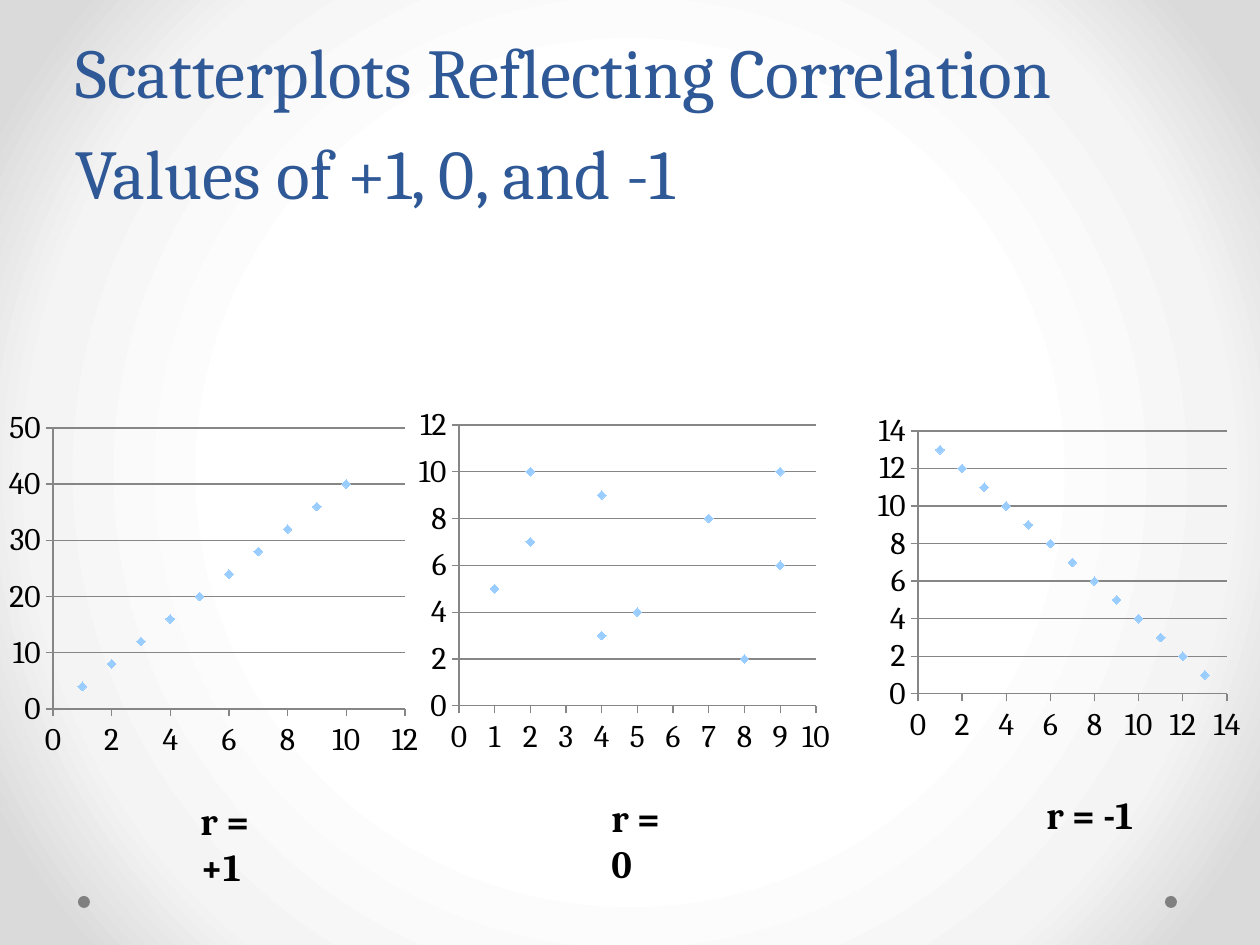
from pptx import Presentation
from pptx.chart.data import XyChartData
from pptx.dml.color import RGBColor
from pptx.enum.chart import XL_CHART_TYPE, XL_MARKER_STYLE, XL_TICK_MARK
from pptx.enum.shapes import MSO_SHAPE
from pptx.enum.text import MSO_ANCHOR, MSO_AUTO_SIZE, PP_ALIGN
from pptx.oxml import parse_xml
from pptx.oxml.ns import nsdecls, qn
from pptx.util import Emu, Pt

SCATTER = XL_CHART_TYPE.XY_SCATTER
DIAMOND = XL_MARKER_STYLE.DIAMOND
OUTSIDE, NO_TICK = XL_TICK_MARK.OUTSIDE, XL_TICK_MARK.NONE
OVAL = MSO_SHAPE.OVAL
TOP, BOTTOM = MSO_ANCHOR.TOP, MSO_ANCHOR.BOTTOM
LEFT, NO_FIT = PP_ALIGN.LEFT, MSO_AUTO_SIZE.NONE

FONT = "Cambria"
BLACK = RGBColor(0, 0, 0)
NAVY = RGBColor(0x2F, 0x58, 0x97)
SKY = RGBColor(0x99, 0xCC, 0xFF)
GRAY = RGBColor(0x80, 0x80, 0x80)
RULE = RGBColor(0x86, 0x86, 0x86)
GLOW = [(0, RGBColor(0xFF, 0xFF, 0xFF)), (50, RGBColor(0xFF, 0xFF, 0xFF)),
        (76, RGBColor(0xF4, 0xF4, 0xF4)), (92, RGBColor(0xDA, 0xDA, 0xDA)),
        (100, RGBColor(0xDA, 0xDA, 0xDA))]

SCALE = 914400 / 126

# chart box, plot box, points, x (max, step), y (max, step), label, label box
PANELS = [
    ((0, 403, 427, 363), (53, 428, 352, 281),
     [(x, 4 * x) for x in range(1, 11)],
     (12, 2), (50, 10), "r = +1", (188, 791, 118, 59)),
    ((411, 399, 428, 363), (459, 425, 357, 281),
     [(1, 5), (9, 6), (4, 9), (2, 10), (9, 10),
      (4, 3), (7, 8), (2, 7), (5, 4), (8, 2)],
     (10, 1), (12, 2), "r = 0", (599, 788, 98, 59)),
    ((838, 392, 422, 372), (918, 431, 309, 263),
     [(x, 14 - x) for x in range(1, 14)],
     (14, 2), (14, 2), "r = -1", (1034, 785, 113, 59)),
]


def px(n):
    return Emu(round(n * SCALE))


def place(box):
    return [px(n) for n in box]


def write(shape, text, size, color, bold=False, anchor=TOP, lead=None):
    frame = shape.text_frame
    frame.word_wrap = True
    frame.auto_size = NO_FIT
    frame.vertical_anchor = anchor
    para = frame.paragraphs[0]
    para.alignment = LEFT
    if lead:
        para.line_spacing = Pt(lead)
    run = para.add_run()
    run.text = text
    font = run.font
    font.name, font.size, font.bold = FONT, Pt(size), bold
    font.color.rgb = color


def back(slide):
    """Fill the background with a round glow from the centre."""
    slide.background.fill.gradient()
    grad = slide.element.find(".//" + qn("a:gradFill"))
    stops = "".join(
        f'<a:gs pos="{pos * 1000}"><a:srgbClr val="{color}"/></a:gs>'
        for pos, color in GLOW)
    grad.getparent().replace(grad, parse_xml(
        f'<a:gradFill {nsdecls("a")} rotWithShape="1">'
        f'<a:gsLst>{stops}</a:gsLst><a:path path="circle">'
        '<a:fillToRect l="50000" t="50000" r="50000" b="50000"/>'
        '</a:path></a:gradFill>'))


def dot(slide, box):
    shape = slide.shapes.add_shape(OVAL, *place(box))
    shape.shadow.inherit = False
    shape.fill.solid()
    shape.fill.fore_color.rgb = GRAY
    shape.line.fill.background()


def title(slide, text, box):
    shape = slide.shapes.title
    shape.left, shape.top, shape.width, shape.height = place(box)
    write(shape, text, 40, NAVY, anchor=BOTTOM, lead=58)


def rule(line):
    line.color.rgb = RULE
    line.width = Pt(0.75)


def scale(axis, top, step):
    axis.minimum_scale, axis.maximum_scale = 0, top
    axis.major_unit = step
    axis.major_tick_mark, axis.minor_tick_mark = OUTSIDE, NO_TICK
    axis.tick_labels.number_format = "General"
    axis.tick_labels.number_format_is_linked = False
    rule(axis.format.line)


def inset(chart, box, plot):
    """Fix the inner plot area at its place within the chart box."""
    left, top, wide, high = box
    parts = {"x": (plot[0] - left) / wide, "y": (plot[1] - top) / high,
             "w": plot[2] / wide, "h": plot[3] / high}
    modes = "".join(f'<c:{key}Mode val="edge"/>' for key in "xy")
    sizes = "".join(f'<c:{key} val="{val:.4f}"/>'
                    for key, val in parts.items())
    area = chart.element.find(".//" + qn("c:plotArea"))
    old = area.find(qn("c:layout"))
    if old is not None:
        area.remove(old)
    area.insert(0, parse_xml(
        f'<c:layout {nsdecls("c")}><c:manualLayout>'
        f'<c:layoutTarget val="inner"/>{modes}{sizes}'
        '</c:manualLayout></c:layout>'))


def scatter(slide, box, plot, points, across, up):
    data = XyChartData()
    series = data.add_series("Series 1")
    for x, y in points:
        series.add_data_point(x, y)
    chart = slide.shapes.add_chart(SCATTER, *place(box), data).chart
    chart.has_legend = chart.has_title = False
    chart.font.name, chart.font.size = FONT, Pt(18)
    chart.font.color.rgb = BLACK
    chart.plots[0].vary_by_categories = False
    scale(chart.category_axis, *across)
    scale(chart.value_axis, *up)
    chart.category_axis.has_major_gridlines = False
    chart.value_axis.has_major_gridlines = True
    rule(chart.value_axis.major_gridlines.format.line)
    inset(chart, box, plot)
    series = chart.plots[0].series[0]
    series.smooth = False
    series.format.line.fill.background()
    mark = series.marker
    mark.style, mark.size = DIAMOND, 5
    mark.format.fill.solid()
    mark.format.fill.fore_color.rgb = SKY
    mark.format.line.fill.background()


def label(slide, text, box):
    write(slide.shapes.add_textbox(*place(box)), text, 22, BLACK, bold=True)


def main():
    deck = Presentation()
    deck.slide_width, deck.slide_height = px(1260), px(945)
    slide = deck.slides.add_slide(deck.slide_layouts[5])
    back(slide)
    for left in (1165, 78):
        dot(slide, (left, 896, 12, 12))
    title(slide, "Scatterplots Reflecting Correlation Values of +1, 0, and -1",
          (63, 0, 1134, 220))
    for box, plot, points, across, up, text, spot in PANELS:
        scatter(slide, box, plot, points, across, up)
        label(slide, text, spot)
    deck.save("out.pptx")


if __name__ == "__main__":
    main()
